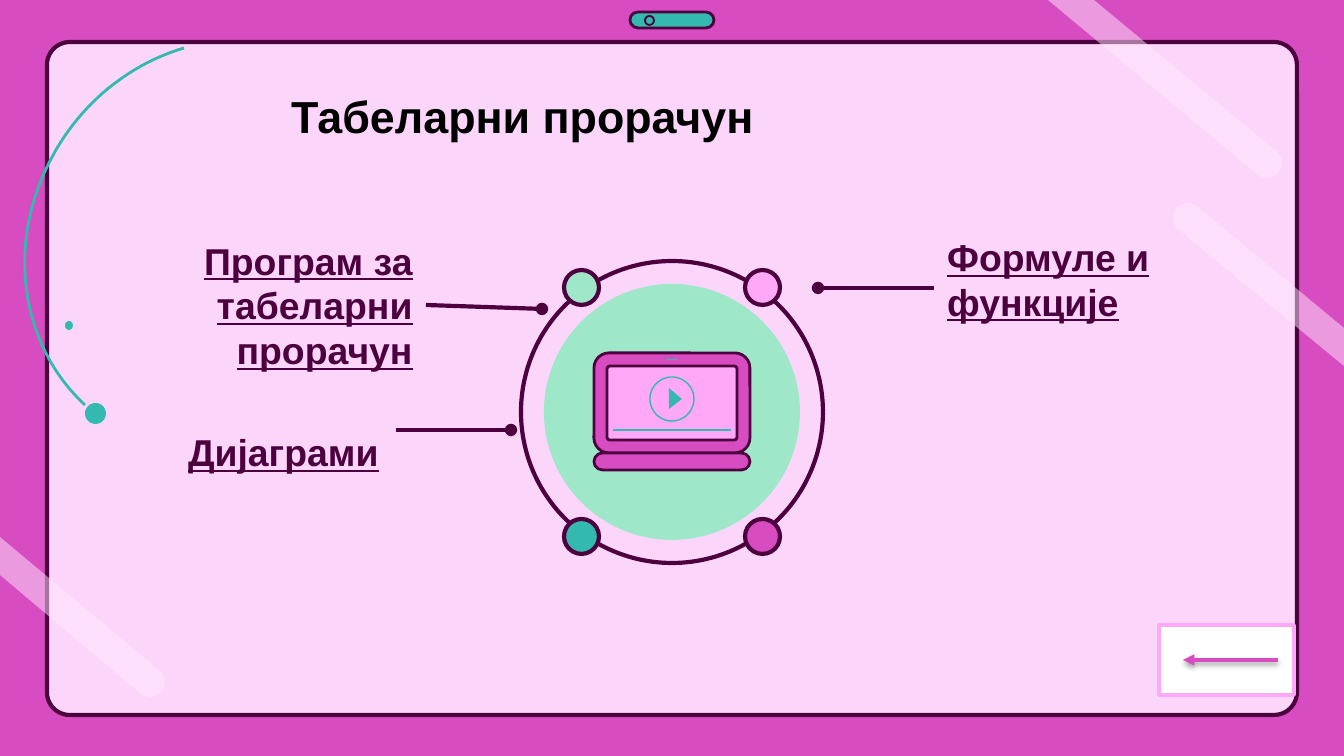
from dataclasses import dataclass
from math import cos, radians, sin
from typing import Optional

from lxml import etree
from pptx import Presentation
from pptx.dml.color import RGBColor
from pptx.enum.shapes import MSO_CONNECTOR, MSO_SHAPE
from pptx.enum.text import MSO_ANCHOR, MSO_AUTO_SIZE, PP_ALIGN
from pptx.oxml.ns import qn
from pptx.util import Inches, Pt

EMU_PER_PX = 914400 / 134.4
RECTANGLE, ROUNDED, OVAL = MSO_SHAPE.RECTANGLE, MSO_SHAPE.ROUNDED_RECTANGLE, MSO_SHAPE.OVAL
STRAIGHT = MSO_CONNECTOR.STRAIGHT
LEFT, RIGHT = PP_ALIGN.LEFT, PP_ALIGN.RIGHT
TOP, MIDDLE = MSO_ANCHOR.TOP, MSO_ANCHOR.MIDDLE
RIGHT_SIDE = 3

PLUM, MAGENTA, PINK, BLUSH = "4D003E", "D84CC1", "FFA8F7", "FCD5FB"
TEAL, MINT, WHITE, BLACK, GLOSS = "33B9AF", "9FE7C9", "FFFFFF", "000000", "FFE9FE"

Point = tuple[float, float]


@dataclass
class Block:
    kind: MSO_SHAPE
    left: int
    top: int
    width: int
    height: int
    fill: Optional[str] = None
    line: Optional[str] = None
    weight: float = 2.25
    rounding: Optional[float] = None


@dataclass
class Label:
    text: str
    left: int
    top: int
    width: int
    height: int
    align: PP_ALIGN = LEFT


@dataclass
class Line:
    start: Point
    end: Point
    color: str = PLUM
    weight: float = 2.25
    tail: Optional[str] = None


@dataclass
class Band:
    """Diagonal streak: two points on the slide edge and a round cap."""
    edge: list[Point]
    cap: Point
    facing: int


BACKDROP = [
    Block(ROUNDED, 47, 42, 1250, 673, BLUSH, PLUM, rounding=0.034),
    Block(ROUNDED, 630, 12, 84, 16, TEAL, PLUM, 1.5, 0.5),
    Block(OVAL, 645, 16, 9, 9, None, PLUM, 1),
    Block(OVAL, 65, 321, 8, 9, TEAL),
    Block(OVAL, 85, 403, 21, 21, TEAL),
]
CURL = [[(85, 405), (19, 344), (4, 239), (56, 150)],
        [(56, 150), (87, 97), (134, 63), (184, 48)]]
BANDS = [
    Band([(1094, 0), (1048, 0)], (1267, 163), 40),
    Band([(0, 537), (0, 575)], (150, 682), 40),
    Band([(1344, 366), (1344, 328)], (1188, 218), 220),
]
CAP_RADIUS = 15
LAPTOP = [
    Block(OVAL, 544, 284, 256, 256, MINT),
    Block(OVAL, 521, 261, 302, 302, None, PLUM),
    Block(ROUNDED, 594, 353, 156, 100, MAGENTA, PLUM, 1.5, 0.15),
    Block(ROUNDED, 607, 366, 130, 74, PINK, PLUM, 1.5, 0.04),
    Block(OVAL, 650, 377, 44, 44, None, TEAL, 0.75),
    Block(ROUNDED, 594, 453, 156, 17, MAGENTA, PLUM, 1.5, 0.5),
]
PLAY_MARK = [(669, 388), (669, 409), (682, 399)]
LAPTOP_LINES = [
    Line((613, 430), (731, 430), TEAL, 0.75),
    Line((666, 359), (678, 359), TEAL, 0.25),
]
FORMULAS = Label("Формуле и функције", 934, 220, 305, 118)
PROGRAM = Label("Програм за табеларни прорачун", 121, 242, 305, 126, RIGHT)
CHARTS = Label("Дијаграми", 87, 415, 305, 74, RIGHT)
TITLE = Label("Табеларни прорачун", 278, 82, 823, 67)
NODE_SIZE = 35
NODES = {(564, 270): MINT, (745, 270): PINK, (564, 519): TEAL, (745, 519): MAGENTA}


def px(value: float) -> int:
    return round(value * EMU_PER_PX)


def rgb(color: str) -> RGBColor:
    return RGBColor.from_string(color)


def style(shape, fill: Optional[str], line: Optional[str], weight: float) -> None:
    shape.shadow.inherit = False
    if fill:
        shape.fill.solid()
        shape.fill.fore_color.rgb = rgb(fill)
    else:
        shape.fill.background()
    if line:
        shape.line.color.rgb = rgb(line)
        shape.line.width = Pt(weight)
    else:
        shape.line.fill.background()


def draw_block(slide, block: Block) -> None:
    shape = slide.shapes.add_shape(block.kind, px(block.left), px(block.top),
                                   px(block.width), px(block.height))
    if block.rounding is not None:
        shape.adjustments[0] = block.rounding
    style(shape, block.fill, block.line, block.weight)


def draw_outline(slide, points: list[Point], fill: Optional[str] = None,
                 line: Optional[str] = None, weight: float = 1.5):
    """Filled outlines are closed, the others stay open."""
    scaled = [(px(x), px(y)) for x, y in points]
    builder = slide.shapes.build_freeform(*scaled[0])
    builder.add_line_segments(scaled[1:], close=fill is not None)
    shape = builder.convert_to_shape()
    style(shape, fill, line, weight)
    return shape


def curve_points(curve: list[Point], steps: int = 24) -> list[Point]:
    """Points along a cubic Bézier curve."""
    points = []
    for step in range(steps + 1):
        t = step / steps
        weights = ((1 - t) ** 3, 3 * t * (1 - t) ** 2, 3 * t * t * (1 - t), t ** 3)
        points.append((sum(w * x for w, (x, _) in zip(weights, curve)),
                       sum(w * y for w, (_, y) in zip(weights, curve))))
    return points


def draw_band(slide, band: Band) -> None:
    angles = [radians(band.facing + turn) for turn in range(90, -91, -10)]
    cap = [(band.cap[0] + CAP_RADIUS * cos(a), band.cap[1] + CAP_RADIUS * sin(a))
           for a in angles]
    shape = draw_outline(slide, band.edge + cap, GLOSS)
    color = next(shape.element.spPr.iter(qn("a:srgbClr")))
    etree.SubElement(color, qn("a:alpha"), val="50000")


def draw_line(slide, line: Line, shadow: bool = False):
    connector = slide.shapes.add_connector(STRAIGHT, *map(px, line.start + line.end))
    connector.line.color.rgb = rgb(line.color)
    connector.line.width = Pt(line.weight)
    properties = connector.element.spPr
    if line.tail:
        etree.SubElement(properties.find(qn("a:ln")), qn("a:tailEnd"), type=line.tail)
    effects = etree.SubElement(properties, qn("a:effectLst"))
    if shadow:
        outer = etree.SubElement(effects, qn("a:outerShdw"), blurRad=str(Pt(3.1)),
                                 dist=str(Pt(1.6)), dir="5400000", rotWithShape="0")
        color = etree.SubElement(outer, qn("a:srgbClr"), val=BLACK)
        etree.SubElement(color, qn("a:alpha"), val="38000")
    return connector


def draw_label(slide, label: Label, size: int = 20, color: str = PLUM,
               underline: bool = True, anchor: MSO_ANCHOR = MIDDLE):
    box = slide.shapes.add_textbox(px(label.left), px(label.top),
                                   px(label.width), px(label.height))
    frame = box.text_frame
    frame.word_wrap = True
    frame.vertical_anchor = anchor
    para = frame.paragraphs[0]
    para.alignment = label.align
    span = para.add_run()
    span.text = label.text
    font = span.font
    font.name, font.size, font.bold, font.underline = "Arial", Pt(size), True, underline
    font.color.rgb = rgb(color)
    return box


def main() -> None:
    deck = Presentation()
    deck.slide_width, deck.slide_height = px(1344), px(756)
    slide = deck.slides.add_slide(deck.slide_layouts[6])
    slide.background.fill.solid()
    slide.background.fill.fore_color.rgb = rgb(MAGENTA)

    for block in BACKDROP:
        draw_block(slide, block)
    draw_outline(slide, curve_points(CURL[0]) + curve_points(CURL[1])[1:], line=TEAL)
    for band in BANDS:
        draw_band(slide, band)

    for block in LAPTOP:
        draw_block(slide, block)
    draw_outline(slide, PLAY_MARK, TEAL)
    for line in LAPTOP_LINES:
        draw_line(slide, line)

    boxes = [draw_label(slide, label) for label in (FORMULAS, PROGRAM, CHARTS)]
    for box in boxes:
        box.text_frame.margin_top = box.text_frame.margin_bottom = Inches(0.1)
    draw_line(slide, Line((934, 288), (818, 288), tail="oval"))
    draw_line(slide, Line((396, 430), (511, 430), tail="oval"))
    program_line = draw_line(slide, Line((426, 305), (542, 309), tail="oval"))
    program_line.begin_connect(boxes[1], RIGHT_SIDE)
    for (left, top), fill in NODES.items():
        draw_block(slide, Block(OVAL, left, top, NODE_SIZE, NODE_SIZE, fill, PLUM))

    draw_block(slide, Block(RECTANGLE, 1159, 625, 135, 70, WHITE, PINK, 2))
    draw_line(slide, Line((1278, 660), (1183, 660), MAGENTA, 2, "triangle"), shadow=True)
    title = draw_label(slide, TITLE, 24, BLACK, False, TOP)
    title.text_frame.auto_size = MSO_AUTO_SIZE.SHAPE_TO_FIT_TEXT
    title.text_frame.paragraphs[0].space_after = Pt(3)

    deck.save("out.pptx")


if __name__ == "__main__":
    main()
